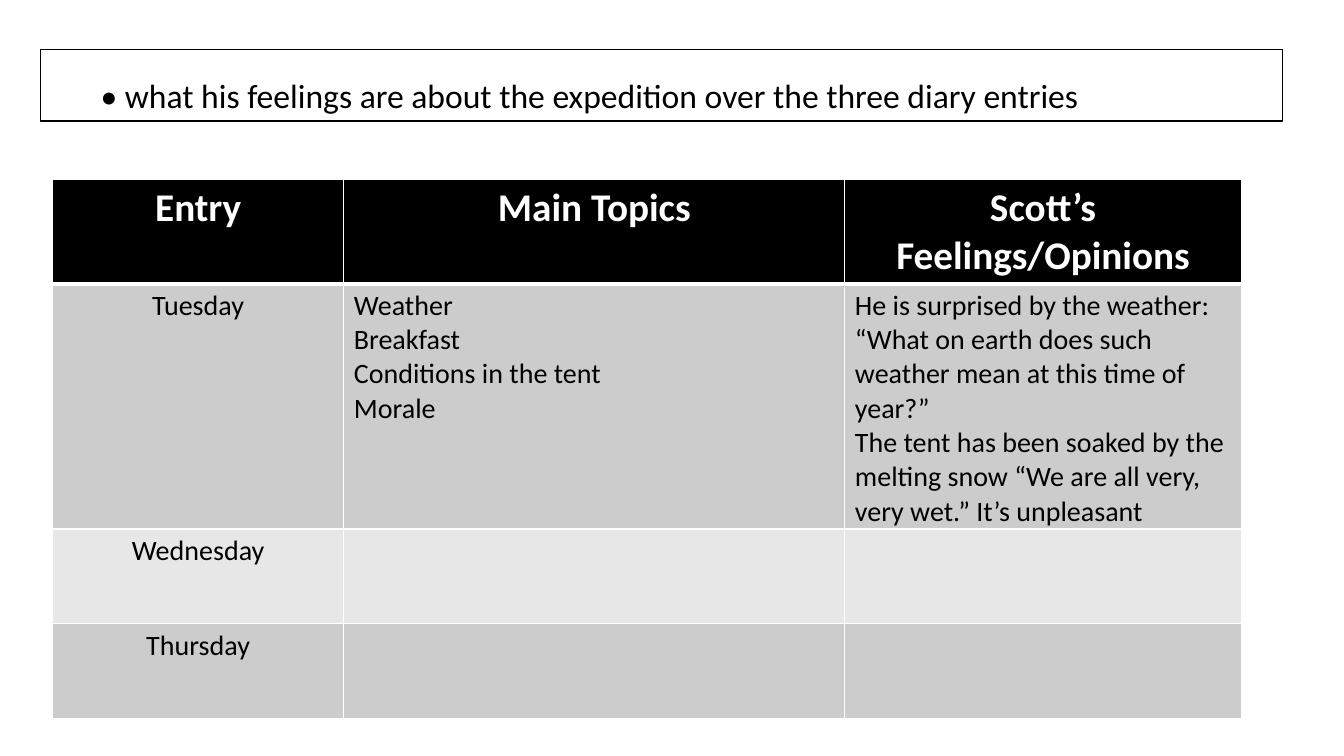
import pptx
import pptx.util
import pptx.dml.color
import pptx.enum.shapes
import pptx.enum.text
import pptx.oxml
import pptx.oxml.ns
from dataclasses import dataclass


@dataclass(frozen=True)
class Theme:
    font: str = "Calibri"
    ink: str = "000000"
    paper: str = "FFFFFF"
    bands: tuple = ("CCCCCC", "E7E7E7")
    banner_size: int = 24
    header_size: int = 28
    body_size: int = 20
    rule: int = 1
    header_rule: int = 3


THEME = Theme()
CENTER = pptx.enum.text.PP_ALIGN.CENTER
LEFT = pptx.enum.text.PP_ALIGN.LEFT

BANNER = "• what his feelings are about the expedition over the three diary entries"
COLUMNS = (2.89, 4.97, 3.93)
ROW_HEIGHT = 0.94
ENTRIES = [
    ["Entry", "Main Topics", "Scott’s Feelings/Opinions"],
    ["Tuesday",
     "Weather\nBreakfast\nConditions in the tent\nMorale",
     "He is surprised by the weather: “What on earth does such weather mean "
     "at this time of year?”\n"
     "The tent has been soaked by the melting snow “We are all very, very wet.” "
     "It’s unpleasant"],
    ["Wednesday", "", ""],
    ["Thursday", "", ""],
]


def rgb(value):
    return pptx.dml.color.RGBColor.from_string(value)


def set_font(p, size, color, bold=False):
    p.font.name = THEME.font
    p.font.size = pptx.util.Pt(size)
    p.font.color.rgb = rgb(color)
    p.font.bold = bold


def set_borders(cell, widths):
    tcPr = cell._tc.get_or_add_tcPr()
    for i, (side, width) in enumerate(widths.items()):
        tcPr.insert(i, pptx.oxml.parse_xml(
            f'<a:ln{side} {pptx.oxml.ns.nsdecls("a")} w="{pptx.util.Pt(width)}">'
            f'<a:solidFill><a:srgbClr val="{THEME.paper}"/></a:solidFill>'
            f'</a:ln{side}>'))


def add_banner(slide, left, top, width, height):
    sp = slide.shapes.add_shape(
        pptx.enum.shapes.MSO_SHAPE.RECTANGLE,
        *map(pptx.util.Inches, (left, top, width, height)))
    sp.shadow.inherit = False
    sp.fill.solid()
    sp.fill.fore_color.rgb = rgb(THEME.paper)
    sp.line.color.rgb = rgb(THEME.ink)
    sp.line.width = pptx.util.Pt(THEME.rule)
    tf = sp.text_frame
    tf.word_wrap = True
    tf.vertical_anchor = pptx.enum.text.MSO_ANCHOR.TOP
    tf.auto_size = pptx.enum.text.MSO_AUTO_SIZE.SHAPE_TO_FIT_TEXT
    p = tf.paragraphs[0]
    p.text = BANNER
    p.level = 1
    p.alignment = LEFT
    p.line_spacing = 1.5
    pPr = p._p.get_or_add_pPr()
    pPr.set("marL", str(pptx.util.Inches(0.5)))
    pPr.set("indent", "0")
    set_font(p, THEME.banner_size, THEME.ink)


def fill_cell(cell, text, row, col):
    header = row == 0
    cell.fill.solid()
    cell.fill.fore_color.rgb = rgb(THEME.ink if header else THEME.bands[(row - 1) % 2])
    set_borders(cell, {
        "L": THEME.rule,
        "R": THEME.rule,
        "T": THEME.header_rule if row == 1 else THEME.rule,
        "B": THEME.header_rule if header else THEME.rule,
    })
    cell.text = text
    for p in cell.text_frame.paragraphs:
        p.alignment = CENTER if header or col == 0 else LEFT
        if header:
            set_font(p, THEME.header_size, THEME.paper, bold=True)
        else:
            set_font(p, THEME.body_size, THEME.ink)


def add_diary_table(slide, left, top, width):
    table = slide.shapes.add_table(
        len(ENTRIES), len(COLUMNS),
        *map(pptx.util.Inches, (left, top, width, ROW_HEIGHT * len(ENTRIES)))).table
    for column, share in zip(table.columns, COLUMNS):
        column.width = pptx.util.Inches(width * share / sum(COLUMNS))
    for row, texts in enumerate(ENTRIES):
        table.rows[row].height = pptx.util.Inches(ROW_HEIGHT)
        for col, text in enumerate(texts):
            fill_cell(table.cell(row, col), text, row, col)


def main():
    prs = pptx.Presentation()
    prs.slide_width = pptx.util.Inches(13.33)
    prs.slide_height = pptx.util.Inches(7.5)
    slide = prs.slides.add_slide(prs.slide_layouts[6])
    add_banner(slide, 0.4, 0.49, 12.32, 0.71)
    add_diary_table(slide, 0.52, 1.78, 11.79)
    prs.save("out.pptx")


if __name__ == "__main__":
    main()
